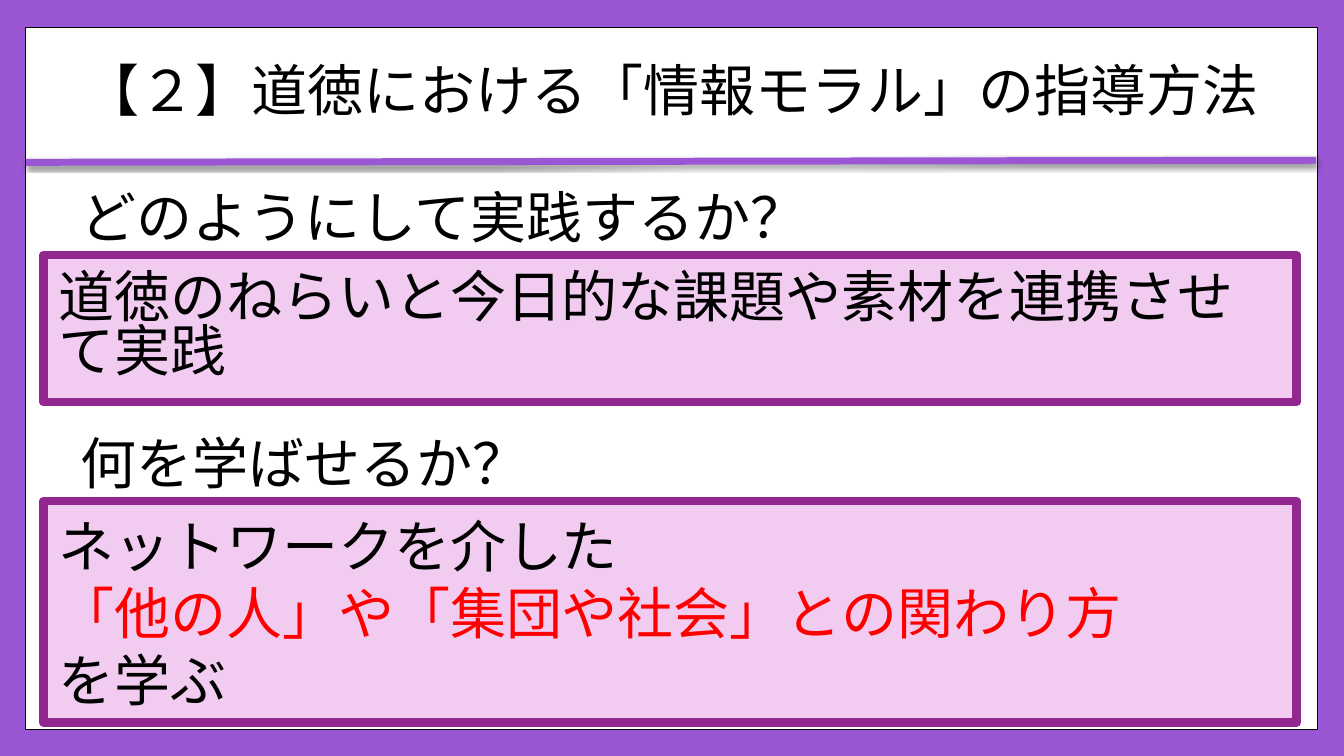
from lxml import etree
from pptx import Presentation
from pptx.dml.color import RGBColor
from pptx.enum.shapes import MSO_CONNECTOR, MSO_SHAPE
from pptx.enum.text import MSO_ANCHOR, MSO_AUTO_SIZE, PP_ALIGN
from pptx.oxml import parse_xml
from pptx.oxml.ns import qn
from pptx.util import Inches, Pt

RECT = MSO_SHAPE.RECTANGLE
MIDDLE = MSO_ANCHOR.MIDDLE
BLACK, RED, VIOLET = "000000", "FF0000", "9B57D3"

prs = Presentation()
prs.slide_width, prs.slide_height = Inches(13.33), Inches(7.5)
COL, ROW = prs.slide_width / 100, prs.slide_height / 100
slide = prs.slides.add_slide(prs.slide_layouts[6])
shapes = slide.shapes


def paint(part, color):
    """Give a fill or a font one solid colour."""
    fill = part if hasattr(part, "solid") else part.fill
    fill.solid()
    fill.fore_color.rgb = RGBColor.from_string(color)


def write(para, text, color=BLACK, face="Arial"):
    """Add one run of 40 point text."""
    run = para.add_run()
    run.text = text
    run.font.size, run.font.name = Pt(40), face
    paint(run.font, color)


# Background and white sheet
paint(slide.background, VIOLET)
sheet = shapes.add_shape(RECT, int(1.88 * COL), int(3.6 * ROW),
                         int(96.17 * COL), int(92.93 * ROW))
sheet.shadow.inherit = False
paint(sheet, "FFFFFF")
paint(sheet.line, BLACK)
sheet.line.width = Pt(1)

# Rule under the title, with a soft shadow
rule = shapes.add_connector(MSO_CONNECTOR.STRAIGHT, int(1.95 * COL), int(21.47 * ROW),
                            int(97.9 * COL), int(21.2 * ROW))
paint(rule.line, VIOLET)
rule.line.width = Pt(5)
rule._element.spPr.append(parse_xml(
    '<a:effectLst xmlns:a="http://schemas.openxmlformats.org/drawingml/2006/main">'
    f'<a:outerShdw blurRad="{Pt(3)}" dist="{Pt(2)}" dir="5400000" rotWithShape="0">'
    '<a:srgbClr val="000000"><a:alpha val="45000"/></a:srgbClr>'
    '</a:outerShdw></a:effectLst>'))

# Title
title = shapes.add_textbox(int(1.95 * COL), int(4.8 * ROW), int(96 * COL), int(15.2 * ROW))
frame = title.text_frame
frame.word_wrap, frame.vertical_anchor = True, MIDDLE
para = frame.paragraphs[0]
para.alignment, para.line_spacing = PP_ALIGN.CENTER, 0.9
write(para, "【２】道徳における「情報モラル」の指導方法", face="Lato")

# Each question stands right above its answer box
HEAD = 10.27
parts = [
    ("どのようにして実践するか？", 56.19, 33.73, 19.47, 0.8,
     [("道徳のねらいと今日的な課題や素材を連携させて実践", BLACK)]),
    ("何を学ばせるか？", 35.18, 66.27, 29.33, 1.0,
     [("ネットワークを介した", BLACK),
      ("「他の人」や「集団や社会」との関わり方", RED),
      ("を学ぶ", BLACK)]),
]
for ask, wide, top, high, gap, lines in parts:
    box = shapes.add_shape(RECT, int(3.23 * COL), int(top * ROW),
                           int(93.25 * COL), int(high * ROW))
    box.shadow.inherit = False
    paint(box, "F1CCF0")
    paint(box.line, "92278F")
    box.line.width = Pt(6)
    etree.SubElement(box.line._get_or_add_ln(), qn("a:round"))
    frame = box.text_frame
    frame.word_wrap, frame.vertical_anchor = True, MIDDLE
    para = frame.paragraphs[0]
    para.alignment = PP_ALIGN.LEFT
    para.line_spacing, para.space_before = gap, Pt(14)
    para._p.get_or_add_pPr().set("marL", str(Inches(0.05)))
    for i, (text, color) in enumerate(lines):
        if i:
            para.add_line_break()
        write(para, text, color)

    head = shapes.add_textbox(int(5.25 * COL), int((top - HEAD) * ROW),
                              int(wide * COL), int(HEAD * ROW))
    head.text_frame.word_wrap = False
    head.text_frame.auto_size = MSO_AUTO_SIZE.SHAPE_TO_FIT_TEXT
    write(head.text_frame.paragraphs[0], ask)

prs.save("out.pptx")
